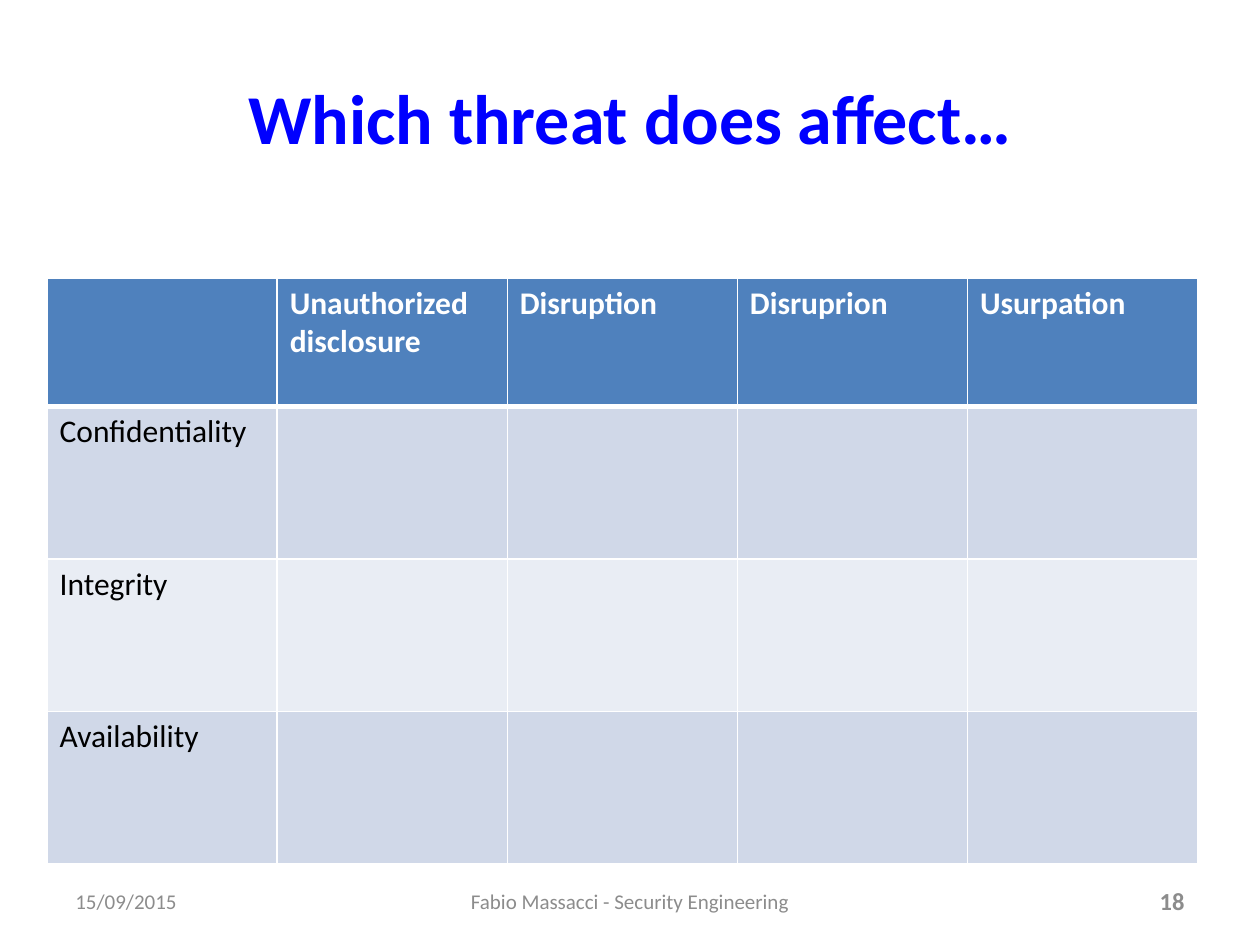
from dataclasses import dataclass

from lxml.etree import SubElement
from pptx import Presentation
from pptx.dml.color import RGBColor as Color
from pptx.enum.text import MSO_ANCHOR as Anchor, PP_ALIGN as Align
from pptx.oxml.ns import qn
from pptx.util import Cm, Pt


@dataclass(frozen=True)
class Theme:
    font: str = "Calibri"
    title: str = "0000FF"
    header: str = "4F81BD"
    bands: tuple = ("D0D8E8", "E9EDF4")
    light: str = "FFFFFF"
    dark: str = "000000"
    muted: str = "8C8C8C"
    title_size: int = 40
    table_size: int = 18
    footer_size: int = 12
    number_size: int = 14
    rule: int = 1
    header_rule: int = 3


THEME = Theme()
THREATS = ["Unauthorized disclosure", "Disruption", "Disruprion", "Usurpation"]
PROPERTIES = ["Confidentiality", "Integrity", "Availability"]


def add_text(frame, text, size, color, bold=False, align=Align.LEFT):
    para = frame.paragraphs[0]
    para.alignment = align
    span = para.add_run()
    span.text = text
    span.font.name = THEME.font
    span.font.size = Pt(size)
    span.font.bold = bold
    span.font.color.rgb = Color.from_string(color)


def place_title(page, left, top, width, height):
    title = page.shapes.title
    title.left, title.top, title.width, title.height = map(Cm, (left, top, width, height))
    title.text_frame.vertical_anchor = Anchor.MIDDLE
    add_text(title.text_frame, "Which threat does affect…", THEME.title_size,
             THEME.title, True, Align.CENTER)


def add_border(cell, side, width):
    line = SubElement(cell._tc.get_or_add_tcPr(), qn(f"a:{side}"), w=str(Pt(width)))
    fill = SubElement(line, qn("a:solidFill"))
    SubElement(fill, qn("a:srgbClr"), val=THEME.light)


def format_cell(cell, row, text):
    is_header = row == 0
    above = THEME.header_rule if row == 1 else THEME.rule
    below = THEME.header_rule if is_header else THEME.rule
    for side, width in (("lnL", THEME.rule), ("lnR", THEME.rule), ("lnT", above), ("lnB", below)):
        add_border(cell, side, width)
    cell.fill.solid()
    shade = THEME.header if is_header else THEME.bands[(row - 1) % 2]
    cell.fill.fore_color.rgb = Color.from_string(shade)
    if text:
        add_text(cell.text_frame, text, THEME.table_size,
                 THEME.light if is_header else THEME.dark, is_header)


def add_threat_table(page, left, top, width, height):
    rows = [[""] + THREATS] + [[name] + [""] * len(THREATS) for name in PROPERTIES]
    header_height = height * 0.22
    body_height = (height - header_height) / len(PROPERTIES)
    table = page.shapes.add_table(len(rows), len(rows[0]),
                                  *map(Cm, (left, top, width, height))).table
    for column in table.columns:
        column.width = Cm(width / len(rows[0]))
    for row, texts in enumerate(rows):
        table.rows[row].height = Cm(body_height if row else header_height)
        for column, text in enumerate(texts):
            format_cell(table.cell(row, column), row, text)


def add_footer(page, left, top, width, height):
    side, middle = 5.93, 8.04
    parts = [
        (0, side, "15/09/2015", THEME.footer_size, False, Align.LEFT),
        ((width - middle) / 2, middle, "Fabio Massacci - Security Engineering",
         THEME.footer_size, False, Align.CENTER),
        (width - side, side, "18", THEME.number_size, True, Align.RIGHT),
    ]
    for offset, part_width, text, size, bold, align in parts:
        box = page.shapes.add_textbox(*map(Cm, (left + offset, top, part_width, height)))
        box.text_frame.word_wrap = True
        box.text_frame.vertical_anchor = Anchor.MIDDLE
        add_text(box.text_frame, text, size, THEME.muted, bold, align)


def main():
    deck = Presentation()
    deck.slide_width, deck.slide_height = Cm(25.4), Cm(19.05)
    page = deck.slides.add_slide(deck.slide_layouts[5])
    place_title(page, 1.27, 0.76, 22.86, 3.18)
    add_threat_table(page, 0.95, 5.6, 23.19, 11.81)
    add_footer(page, 1.27, 17.66, 22.86, 1.01)
    deck.save("out.pptx")


if __name__ == "__main__":
    main()
